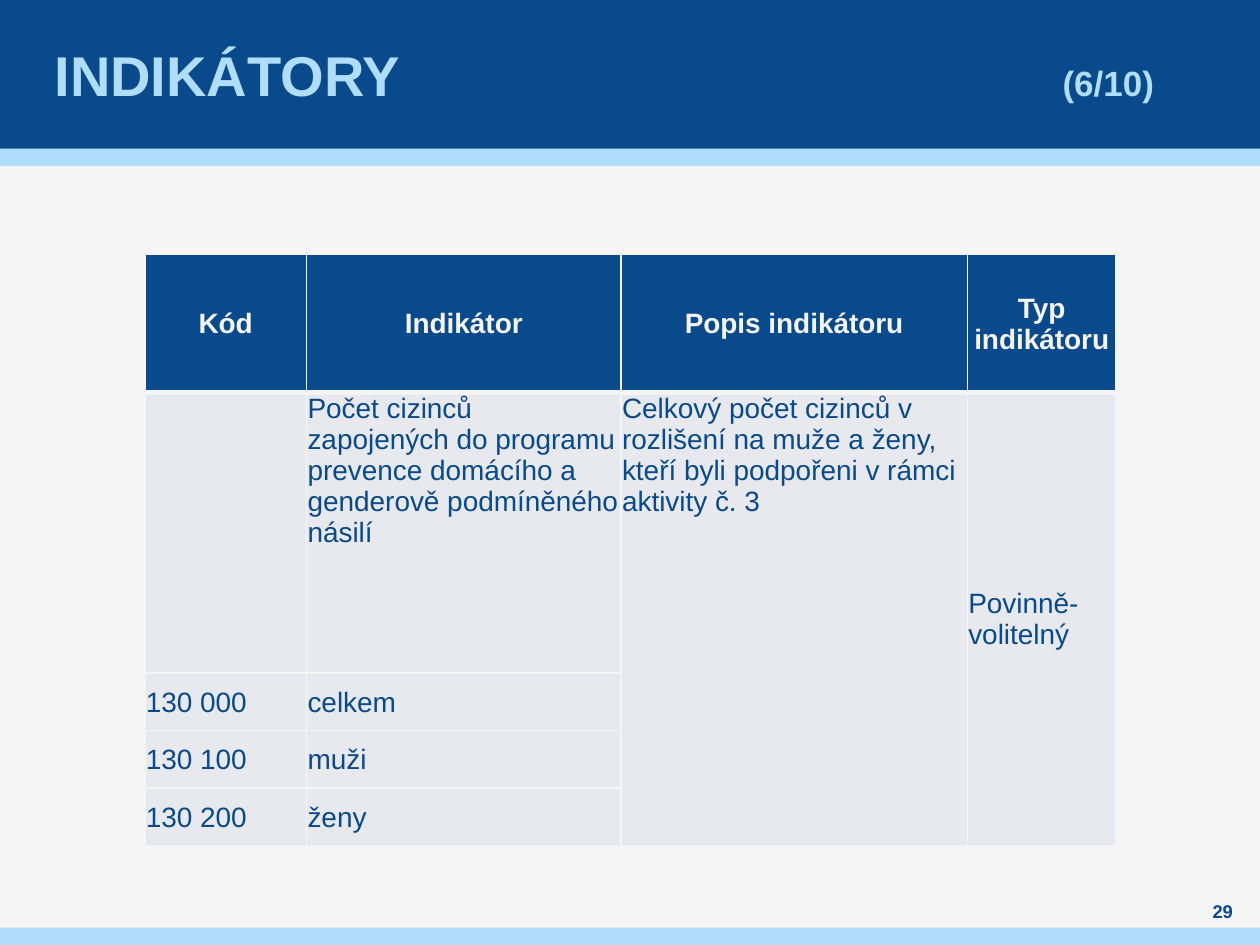
from dataclasses import dataclass

from lxml import etree
from pptx import Presentation
from pptx.dml.color import RGBColor
from pptx.enum.shapes import MSO_SHAPE
from pptx.enum.text import MSO_ANCHOR, PP_ALIGN
from pptx.oxml.ns import qn
from pptx.util import Cm, Pt

RECTANGLE = MSO_SHAPE.RECTANGLE
TOP, MIDDLE = MSO_ANCHOR.TOP, MSO_ANCHOR.MIDDLE
LEFT, CENTER, JUSTIFY = PP_ALIGN.LEFT, PP_ALIGN.CENTER, PP_ALIGN.JUSTIFY


@dataclass(frozen=True)
class Theme:
    font: str = "Arial"
    paper: str = "F5F5F5"
    navy: str = "084A8B"
    sky: str = "AFDDFA"
    cell: str = "E7E9EE"
    title_size: float = 32
    counter_size: float = 20
    table_size: float = 16
    number_size: float = 10.5
    grid_line: float = 1
    header_line: float = 3


@dataclass(frozen=True)
class Box:
    left: float
    top: float
    width: float
    height: float

    def lengths(self) -> tuple:
        return Cm(self.left), Cm(self.top), Cm(self.width), Cm(self.height)


@dataclass(frozen=True)
class Band:
    box: Box
    color: str


@dataclass(frozen=True)
class Entry:
    row: int
    column: int
    text: str
    align: PP_ALIGN = LEFT
    anchor: MSO_ANCHOR = MIDDLE


THEME = Theme()
WIDTH, HEIGHT = 25.4, 19.05
HEADER_HEIGHT, STRIPE = 3.0, 0.35

BANDS = (
    Band(Box(0, HEADER_HEIGHT, WIDTH, STRIPE), THEME.sky),
    Band(Box(0, 0, WIDTH, HEADER_HEIGHT), THEME.navy),
    Band(Box(0, HEIGHT - STRIPE, WIDTH, STRIPE), THEME.sky),
)
TITLE_BOX = Box(1, 0, 23.4, HEADER_HEIGHT)
COUNTER_TAB = 20.32
NUMBER_BOX = Box(24, 18.11, 1.3, 0.5)

COLUMN_WIDTHS = (3.26, 6.34, 6.98, 3.0)
ROW_HEIGHTS = (2.78, 5.66, 1.16, 1.16, 1.16)
TABLE_BOX = Box(2.92, 5.13, sum(COLUMN_WIDTHS), sum(ROW_HEIGHTS))
MERGED_COLUMNS = (2, 3)

HEADINGS = ("Kód", "Indikátor", "Popis indikátoru", "Typ indikátoru")
GROUPS = (("130 000", "celkem"), ("130 100", "muži"), ("130 200", "ženy"))
ENTRIES = (
    *(Entry(0, column, text, CENTER) for column, text in enumerate(HEADINGS)),
    Entry(1, 1, "Počet cizinců zapojených do programu prevence domácího "
                "a genderově podmíněného násilí", anchor=TOP),
    Entry(1, 2, "Celkový počet cizinců v rozlišení na muže a ženy, "
                "kteří byli podpořeni v rámci aktivity č. 3", anchor=TOP),
    Entry(1, 3, "Povinně-volitelný", JUSTIFY),
    *(Entry(row, 0, code, JUSTIFY) for row, (code, _) in enumerate(GROUPS, 2)),
    *(Entry(row, 1, group) for row, (_, group) in enumerate(GROUPS, 2)),
)


def apply_format(target, values: dict) -> None:
    for name, value in values.items():
        setattr(target, name, value)


def margins(side: float, top: float) -> dict:
    return {"margin_left": Cm(side), "margin_right": Cm(side),
            "margin_top": Cm(top), "margin_bottom": 0}


def add_run(paragraph, text: str, size: float, color: str, bold: bool = True) -> None:
    run = paragraph.add_run()
    run.text = text
    apply_format(run.font, {"name": THEME.font, "size": Pt(size), "bold": bold})
    run.font.color.rgb = RGBColor.from_string(color)


def add_band(slide, band: Band) -> None:
    shape = slide.shapes.add_shape(RECTANGLE, *band.box.lengths())
    shape.shadow.inherit = False
    shape.fill.solid()
    shape.fill.fore_color.rgb = RGBColor.from_string(band.color)
    shape.line.fill.background()


def add_line_of_text(slide, box: Box, side: float, align: PP_ALIGN):
    """Add a vertically centred text box and return its paragraph."""
    frame = slide.shapes.add_textbox(*box.lengths()).text_frame
    apply_format(frame, {"word_wrap": True, "vertical_anchor": MIDDLE,
                         **margins(side, 0)})
    paragraph = frame.paragraphs[0]
    paragraph.alignment = align
    return paragraph


def add_tab_stop(paragraph, position: float) -> None:
    properties = paragraph._p.get_or_add_pPr()
    stops = etree.SubElement(properties, qn("a:tabLst"))
    etree.SubElement(stops, qn("a:tab"), pos=str(Cm(position)), algn="l")


def add_title(slide) -> None:
    title = add_line_of_text(slide, TITLE_BOX, 0.1, LEFT)
    add_tab_stop(title, COUNTER_TAB)
    add_run(title, "INDIKÁTORY\t", THEME.title_size, THEME.sky)
    add_run(title, "(6/10)", THEME.counter_size, THEME.sky)


def set_borders(cell, top: float, bottom: float) -> None:
    widths = {"a:lnL": THEME.grid_line, "a:lnR": THEME.grid_line,
              "a:lnT": top, "a:lnB": bottom}
    properties = cell._tc.get_or_add_tcPr()
    for index, (tag, width) in enumerate(widths.items()):
        line = etree.Element(qn(tag), w=str(Pt(width)))
        fill = etree.SubElement(line, qn("a:solidFill"))
        etree.SubElement(fill, qn("a:srgbClr"), val=THEME.paper)
        properties.insert(index, line)


def style_cell(cell, row: int) -> None:
    apply_format(cell, margins(0.02, 0.02))
    cell.fill.solid()
    color = THEME.cell if row else THEME.navy
    cell.fill.fore_color.rgb = RGBColor.from_string(color)
    set_borders(cell,
                top=THEME.header_line if row == 1 else THEME.grid_line,
                bottom=THEME.grid_line if row else THEME.header_line)


def add_indicator_table(slide) -> None:
    table = slide.shapes.add_table(len(ROW_HEIGHTS), len(COLUMN_WIDTHS),
                                   *TABLE_BOX.lengths()).table
    for column, width in zip(table.columns, COLUMN_WIDTHS):
        column.width = Cm(width)
    for index, height in enumerate(ROW_HEIGHTS):
        table.rows[index].height = Cm(height)
        for cell in table.rows[index].cells:
            style_cell(cell, index)
    for column in MERGED_COLUMNS:
        table.cell(1, column).merge(table.cell(len(ROW_HEIGHTS) - 1, column))
    for entry in ENTRIES:
        cell = table.cell(entry.row, entry.column)
        cell.vertical_anchor = entry.anchor
        paragraph = cell.text_frame.paragraphs[0]
        paragraph.alignment = entry.align
        is_heading = entry.row == 0
        add_run(paragraph, entry.text, THEME.table_size,
                THEME.paper if is_heading else THEME.navy, is_heading)


def main() -> None:
    presentation = Presentation()
    apply_format(presentation, {"slide_width": Cm(WIDTH), "slide_height": Cm(HEIGHT)})
    slide = presentation.slides.add_slide(presentation.slide_layouts[6])
    slide.background.fill.solid()
    slide.background.fill.fore_color.rgb = RGBColor.from_string(THEME.paper)
    for band in BANDS:
        add_band(slide, band)
    add_title(slide)
    add_indicator_table(slide)
    page_number = add_line_of_text(slide, NUMBER_BOX, 0, CENTER)
    add_run(page_number, "29", THEME.number_size, THEME.navy)
    presentation.save("out.pptx")


if __name__ == "__main__":
    main()
